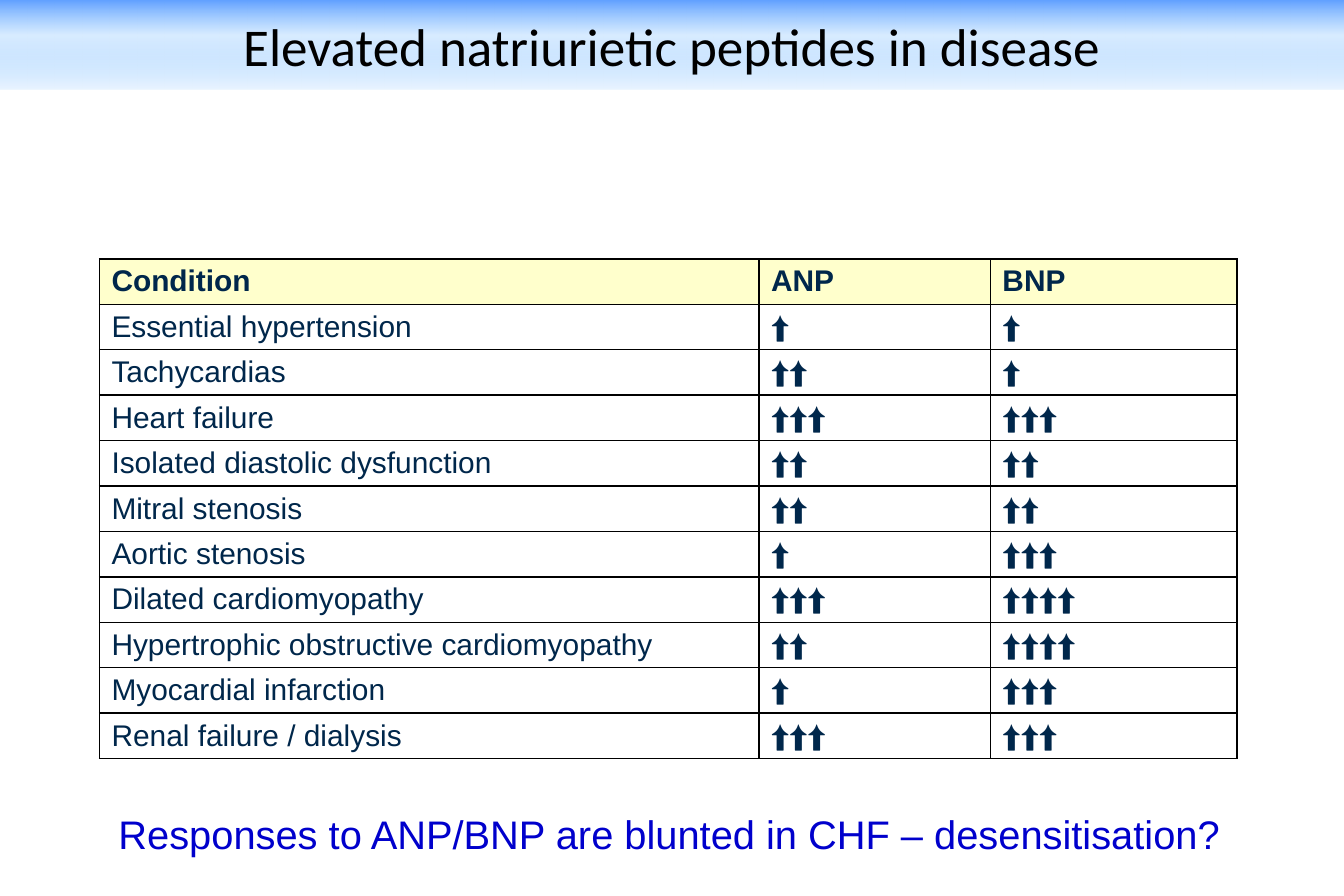
import pptx
import pptx.dml.color
import pptx.enum.shapes
import pptx.enum.text
import pptx.oxml
import pptx.oxml.ns
import pptx.util
from lxml import etree

Pt = pptx.util.Pt
COLORS = {
    "black": "000000", "white": "FFFFFF", "navy": "00274B", "caption": "0000CC",
    "header": "FFFFCC", "band_top": "5E9EFF", "band_middle": "85C2FF", "band_bottom": "EBF5FF",
}
ARROW = "⬆"
CONDITIONS = [  # condition, number of ANP arrows, number of BNP arrows
    ("Essential hypertension", 1, 1),
    ("Tachycardias", 2, 1),
    ("Heart failure", 3, 3),
    ("Isolated diastolic dysfunction", 2, 2),
    ("Mitral stenosis", 2, 2),
    ("Aortic stenosis", 1, 3),
    ("Dilated cardiomyopathy", 3, 4),
    ("Hypertrophic obstructive cardiomyopathy", 2, 4),
    ("Myocardial infarction", 1, 3),
    ("Renal failure / dialysis", 3, 3),
]
COLUMN_WIDTHS = [397.5, 139.5, 148.5]
ROW_HEIGHT = 27.35


def rgb(name):
    return pptx.dml.color.RGBColor.from_string(COLORS[name])


def style_text(paragraph, font_name, size, color, bold=False):
    for run in paragraph.runs:
        run.font.name = font_name
        run.font.size = Pt(size)
        run.font.bold = bold
        run.font.color.rgb = rgb(color)


deck = pptx.Presentation()
deck.slide_width, deck.slide_height = Pt(810), Pt(540)
slide = deck.slides.add_slide(deck.slide_layouts[6])

# Title band
title_band = slide.shapes.add_shape(
    pptx.enum.shapes.MSO_SHAPE.RECTANGLE, 0, 0, deck.slide_width, Pt(54))
title_band.shadow.inherit = False
title_band.line.fill.background()
title_band.fill.gradient()
title_band.fill.gradient_angle = 270
stops = title_band.fill.gradient_stops
stops[0].color.rgb = rgb("band_top")
stops[1].color.rgb = rgb("band_bottom")
first_stop = title_band._element.spPr.find(".//" + pptx.oxml.ns.qn("a:gs"))
first_stop.addnext(pptx.oxml.parse_xml(
    f'<a:gs {pptx.oxml.ns.nsdecls("a")} pos="40000"><a:srgbClr val="{COLORS["band_middle"]}">'
    '<a:alpha val="31000"/></a:srgbClr></a:gs>'))

title_band.text_frame.text = "Elevated natriurietic peptides in disease"
title_band.text_frame.vertical_anchor = pptx.enum.text.MSO_ANCHOR.MIDDLE
title = title_band.text_frame.paragraphs[0]
title.alignment = pptx.enum.text.PP_ALIGN.CENTER
style_text(title, "Calibri", 32, "black")

# Peptide table
table_rows = [("Condition", "ANP", "BNP")]
table_rows += [(name, ARROW * anp, ARROW * bnp) for name, anp, bnp in CONDITIONS]
peptides = slide.shapes.add_table(
    len(table_rows), len(COLUMN_WIDTHS), Pt(60), Pt(156),
    Pt(sum(COLUMN_WIDTHS)), Pt(ROW_HEIGHT * len(table_rows))).table
peptides.horz_banding = False
for column, width in zip(peptides.columns, COLUMN_WIDTHS):
    column.width = Pt(width)

for row_index, row_texts in enumerate(table_rows):
    is_header = row_index == 0
    peptides.rows[row_index].height = Pt(ROW_HEIGHT)
    for column_index, text in enumerate(row_texts):
        cell = peptides.cell(row_index, column_index)
        cell.text_frame.text = text
        entry = cell.text_frame.paragraphs[0]
        indents = entry._p.get_or_add_pPr()
        indents.set("marL", str(Pt(27)))
        indents.set("indent", str(-Pt(27)))
        style_text(entry, "Arial", 18, "navy", is_header)
        cell.fill.solid()
        cell.fill.fore_color.rgb = rgb("header" if is_header else "white")
        for position, side in enumerate(("lnL", "lnR", "lnT", "lnB")):
            border = etree.Element(pptx.oxml.ns.qn("a:" + side), w=str(Pt(1)))
            border_fill = etree.SubElement(border, pptx.oxml.ns.qn("a:solidFill"))
            etree.SubElement(border_fill, pptx.oxml.ns.qn("a:srgbClr"), val=COLORS["black"])
            cell._tc.get_or_add_tcPr().insert(position, border)

# Closing remark
remark = slide.shapes.add_textbox(Pt(64.25), Pt(484.5), Pt(680.5), Pt(36)).text_frame
remark.word_wrap = False
remark.auto_size = pptx.enum.text.MSO_AUTO_SIZE.SHAPE_TO_FIT_TEXT
remark.text = "Responses to ANP/BNP are blunted in CHF – desensitisation?"
style_text(remark.paragraphs[0], "Arial", 24, "caption")

deck.save("out.pptx")
